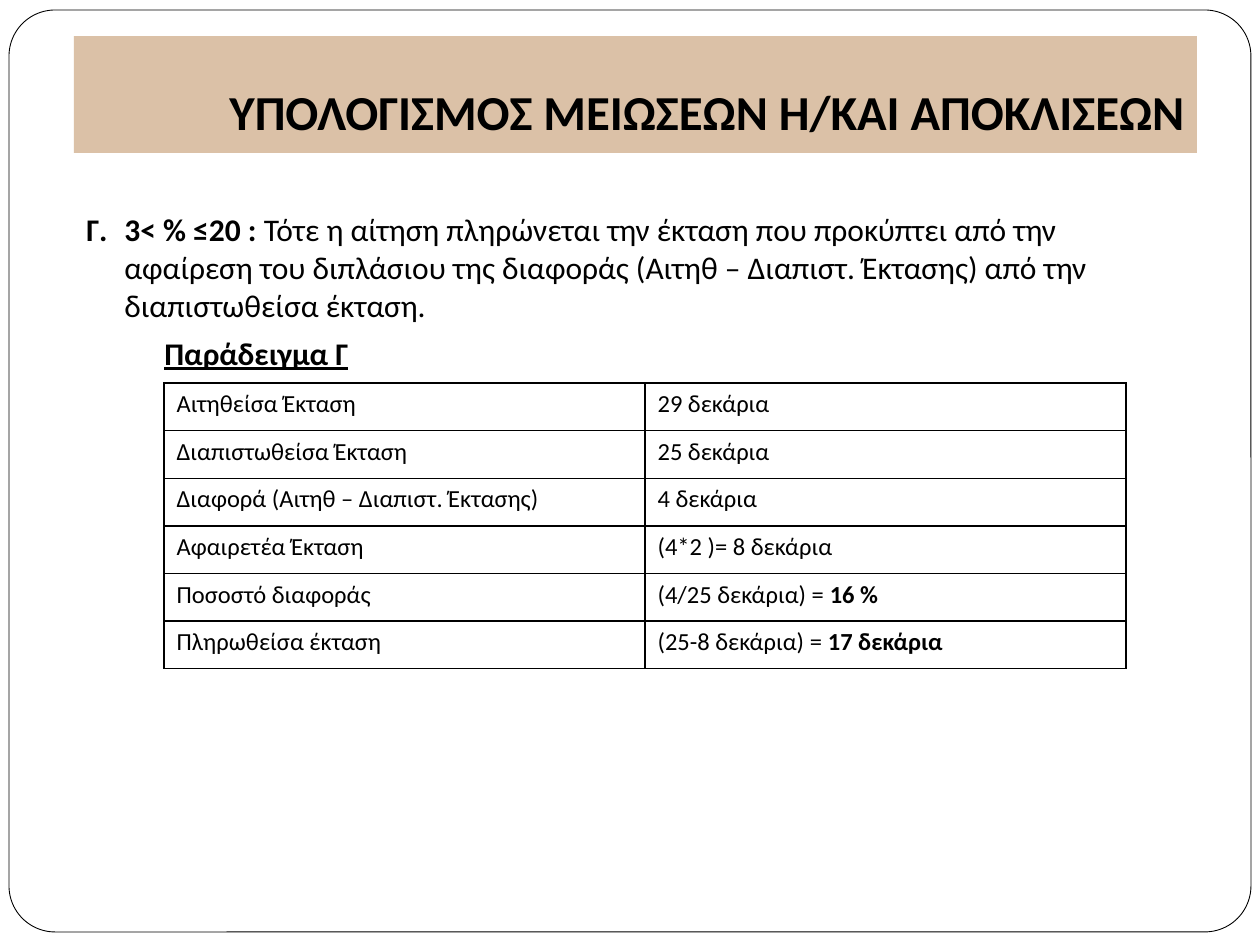
from dataclasses import dataclass

from lxml.etree import SubElement
from pptx import Presentation
from pptx.dml.color import RGBColor
from pptx.enum.shapes import MSO_SHAPE
from pptx.enum.text import MSO_ANCHOR, PP_ALIGN
from pptx.oxml.ns import qn
from pptx.util import Emu, Pt


def px(n):
    return Emu(round(n * 914400 / 126))


@dataclass(frozen=True)
class Theme:
    font: str = "Calibri"
    ink: str = "000000"
    paper: str = "FFFFFF"
    band: str = "DBC1A7"
    title: float = 27.9
    body: float = 18
    cell: float = 14
    frame: float = 0.5
    border: float = 1


class SlideBuilder:
    """Draws styled elements on the current slide."""

    def __init__(self, slide, theme):
        self.s = slide
        self.theme = theme

    def run(self, p, text, size, bold=False, underline=False):
        r = p.add_run()
        r.text = text
        f = r.font
        f.name, f.size, f.bold = self.theme.font, Pt(size), bold
        if underline:
            f.underline = True
        f.color.rgb = RGBColor.from_string(self.theme.ink)

    def shape(self, kind, box, fill, line=None):
        sp = self.s.shapes.add_shape(kind, *map(px, box))
        sp.shadow.inherit = False
        sp.fill.solid()
        sp.fill.fore_color.rgb = RGBColor.from_string(fill)
        if line:
            sp.line.color.rgb = RGBColor.from_string(self.theme.ink)
            sp.line.width = Pt(line)
        else:
            sp.line.fill.background()
        return sp

    def frame(self, box):
        sp = self.shape(MSO_SHAPE.ROUNDED_RECTANGLE, box, self.theme.paper, self.theme.frame)
        sp.adjustments[0] = 0.05

    def title(self, box, text):
        tf = self.shape(MSO_SHAPE.RECTANGLE, box, self.theme.band).text_frame
        tf.word_wrap = True
        tf.vertical_anchor = MSO_ANCHOR.BOTTOM
        tf.margin_bottom = px(13)
        p = tf.paragraphs[0]
        p.alignment = PP_ALIGN.RIGHT
        self.run(p, text, self.theme.title, bold=True)

    def body(self, box, paragraphs):
        tf = self.s.shapes.add_textbox(*map(px, box)).text_frame
        tf.word_wrap = True
        for i, (margin, indent, runs) in enumerate(paragraphs):
            p = tf.add_paragraph() if i else tf.paragraphs[0]
            if i:
                p.space_before = Pt(5.8)
            pPr = p._p.get_or_add_pPr()
            pPr.set("marL", str(px(margin)))
            pPr.set("indent", str(px(indent)))
            for text, bold, underline in runs:
                self.run(p, text, self.theme.body, bold, underline)

    def borders(self, cell):
        tcPr = cell._tc.get_or_add_tcPr()
        for i, side in enumerate(("a:lnL", "a:lnR", "a:lnT", "a:lnB")):
            ln = SubElement(tcPr, qn(side), w=str(Pt(self.theme.border)))
            fill = SubElement(ln, qn("a:solidFill"))
            SubElement(fill, qn("a:srgbClr"), val=self.theme.ink)
            tcPr.remove(ln)
            tcPr.insert(i, ln)

    def table(self, box, rows):
        table = self.s.shapes.add_table(len(rows), 2, *map(px, box)).table
        table.first_row = table.horz_banding = False
        for i, (label, value, result) in enumerate(rows):
            for j, runs in enumerate(([(label, False)], [(value, False), (result, True)])):
                cell = table.cell(i, j)
                cell.fill.background()
                self.borders(cell)
                p = cell.text_frame.paragraphs[0]
                for text, bold in runs:
                    if text:
                        self.run(p, text, self.theme.cell, bold)


def main():
    prs = Presentation()
    prs.slide_width, prs.slide_height = px(1260), px(945)
    s = SlideBuilder(prs.slides.add_slide(prs.slide_layouts[6]), Theme())
    s.frame((9, 10, 1242, 922))
    s.title((74, 36, 1123, 117), "ΥΠΟΛΟΓΙΣΜΟΣ ΜΕΙΩΣΕΩΝ Ή/ΚΑΙ ΑΠΟΚΛΙΣΕΩΝ")
    s.body((74, 204, 1123, 457), [
        (38, -38, [
            ("Γ.\t3˂ % ≤20 : ", True, False),
            ("Τότε η αίτηση πληρώνεται την έκταση που προκύπτει από την "
             "αφαίρεση του διπλάσιου της διαφοράς (Αιτηθ – Διαπιστ. Έκτασης) "
             "από την διαπιστωθείσα έκταση.", False, False),
        ]),
        (78, 0, [("Παράδειγμα Γ", True, True)]),
    ])
    s.table((164, 383, 962, 286), [
        ("Αιτηθείσα Έκταση", "29 δεκάρια", ""),
        ("Διαπιστωθείσα Έκταση", "25 δεκάρια", ""),
        ("Διαφορά (Αιτηθ – Διαπιστ. Έκτασης)", "4 δεκάρια", ""),
        ("Αφαιρετέα Έκταση", "(4*2 )= 8 δεκάρια", ""),
        ("Ποσοστό διαφοράς", "(4/25 δεκάρια) = ", "16 %"),
        ("Πληρωθείσα έκταση", "(25-8 δεκάρια) = ", "17 δεκάρια"),
    ])
    prs.save("out.pptx")


if __name__ == "__main__":
    main()
